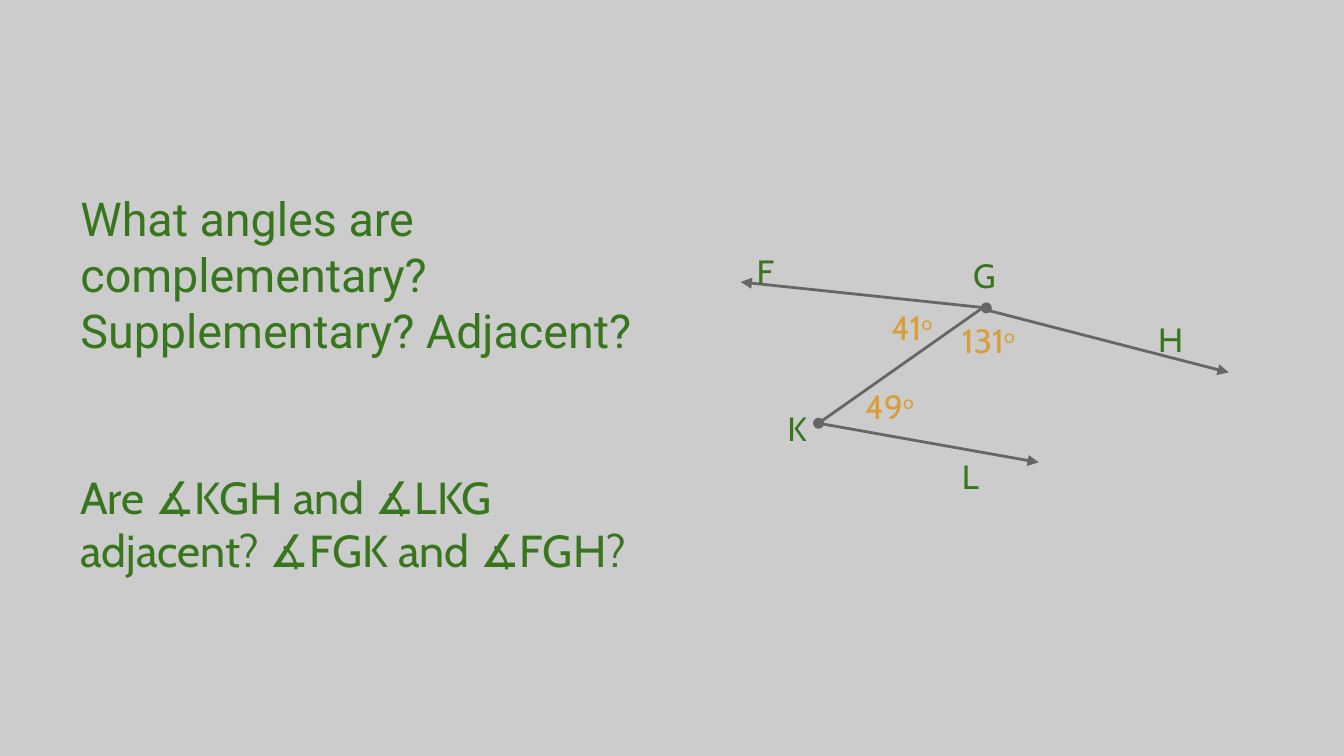
from lxml.etree import SubElement
from pptx import Presentation
from pptx.dml.color import RGBColor
from pptx.enum.shapes import MSO_CONNECTOR
from pptx.enum.text import MSO_ANCHOR, MSO_AUTO_SIZE, PP_ALIGN
from pptx.oxml.ns import qn
from pptx.util import Cm, Pt

GREY = RGBColor(0xCC, 0xCC, 0xCC)
INK = RGBColor(0x66, 0x66, 0x66)
GREEN = RGBColor(0x38, 0x76, 0x1D)
AMBER = RGBColor(0xD8, 0x9F, 0x39)

QUESTIONS = [
    ("What angles are complementary? Supplementary? Adjacent?", "Roboto", 25, 0),
    ("Are ∡KGH and ∡LKG adjacent? ∡FGK and ∡FGH?", "Cabin", 24, 60),
]
RAYS = [
    ((18.64, 5.82), (14, 5.33), "oval", "triangle"),
    ((18.57, 5.84), (23.22, 7.04), None, "triangle"),
    ((18.54, 5.84), (15.47, 8), None, None),
    ((15.47, 8), (19.63, 8.74), "oval", "triangle"),
]
POINTS = [
    ("F", 14.05, 4.5),
    ("G", 18.14, 4.57),
    ("K", 14.63, 7.47),
    ("H", 21.64, 5.77),
    ("L", 17.93, 8.36),
]
ANGLES = [
    ("41", 16.59, 5.56, 1.55),
    ("49", 16.1, 7.04, 1.55),
    ("131", 17.93, 5.79, 1.98),
]


def set_frame(frame):
    frame.word_wrap = True
    frame.auto_size = MSO_AUTO_SIZE.NONE
    frame.vertical_anchor = MSO_ANCHOR.TOP
    frame.margin_left = frame.margin_right = Cm(0.25)
    frame.margin_top = frame.margin_bottom = Cm(0.25)


def add_run(paragraph, text, font, size, color):
    run = paragraph.add_run()
    run.text = text
    run.font.name = font
    run.font.size = Pt(size)
    run.font.color.rgb = color
    return run


def write_questions(body):
    body.left, body.top, body.width, body.height = Cm(1.27), Cm(3.33), Cm(11.1), Cm(10.34)
    frame = body.text_frame
    set_frame(frame)
    for index, (question, font, size, gap) in enumerate(QUESTIONS):
        paragraph = frame.paragraphs[0] if index == 0 else frame.add_paragraph()
        properties = paragraph._p.get_or_add_pPr()
        properties.set("marL", "0")
        properties.set("indent", "0")
        SubElement(properties, qn("a:buNone"))
        paragraph.alignment = PP_ALIGN.LEFT
        paragraph.space_before = Pt(gap)
        paragraph.space_after = Pt(0)
        add_run(paragraph, question, font, size, GREEN)


def add_ray(slide, start, end, head, tail):
    ray = slide.shapes.add_connector(
        MSO_CONNECTOR.STRAIGHT, *(Cm(value) for value in start + end))
    ray.line.color.rgb = INK
    ray.line.width = Pt(1.5)
    line = ray.line._get_or_add_ln()
    for tag, kind in (("a:headEnd", head), ("a:tailEnd", tail)):
        if kind:
            SubElement(line, qn(tag)).set("type", kind)
    SubElement(ray._element.spPr, qn("a:effectLst"))


def add_label(slide, text, left, top, width, color):
    label = slide.shapes.add_textbox(Cm(left), Cm(top), Cm(width), Cm(1.27))
    set_frame(label.text_frame)
    paragraph = label.text_frame.paragraphs[0]
    add_run(paragraph, text, "Cabin", 18, color)
    return paragraph


def add_angle(slide, degrees, left, top, width):
    paragraph = add_label(slide, degrees, left, top, width, AMBER)
    degree_sign = add_run(paragraph, "o", "Cabin", 18, AMBER)
    degree_sign._r.get_or_add_rPr().set("baseline", "30000")


def main():
    deck = Presentation()
    deck.slide_width, deck.slide_height = Cm(25.4), Cm(14.29)
    slide = deck.slides.add_slide(deck.slide_layouts[1])
    slide.background.fill.solid()
    slide.background.fill.fore_color.rgb = GREY
    title = slide.shapes.title._element
    title.getparent().remove(title)

    write_questions(slide.placeholders[1])
    for ray in RAYS:
        add_ray(slide, *ray)
    for point, left, top in POINTS:
        add_label(slide, point, left, top, 0.89, GREEN)
    for angle in ANGLES:
        add_angle(slide, *angle)
    deck.save("out.pptx")


if __name__ == "__main__":
    main()
